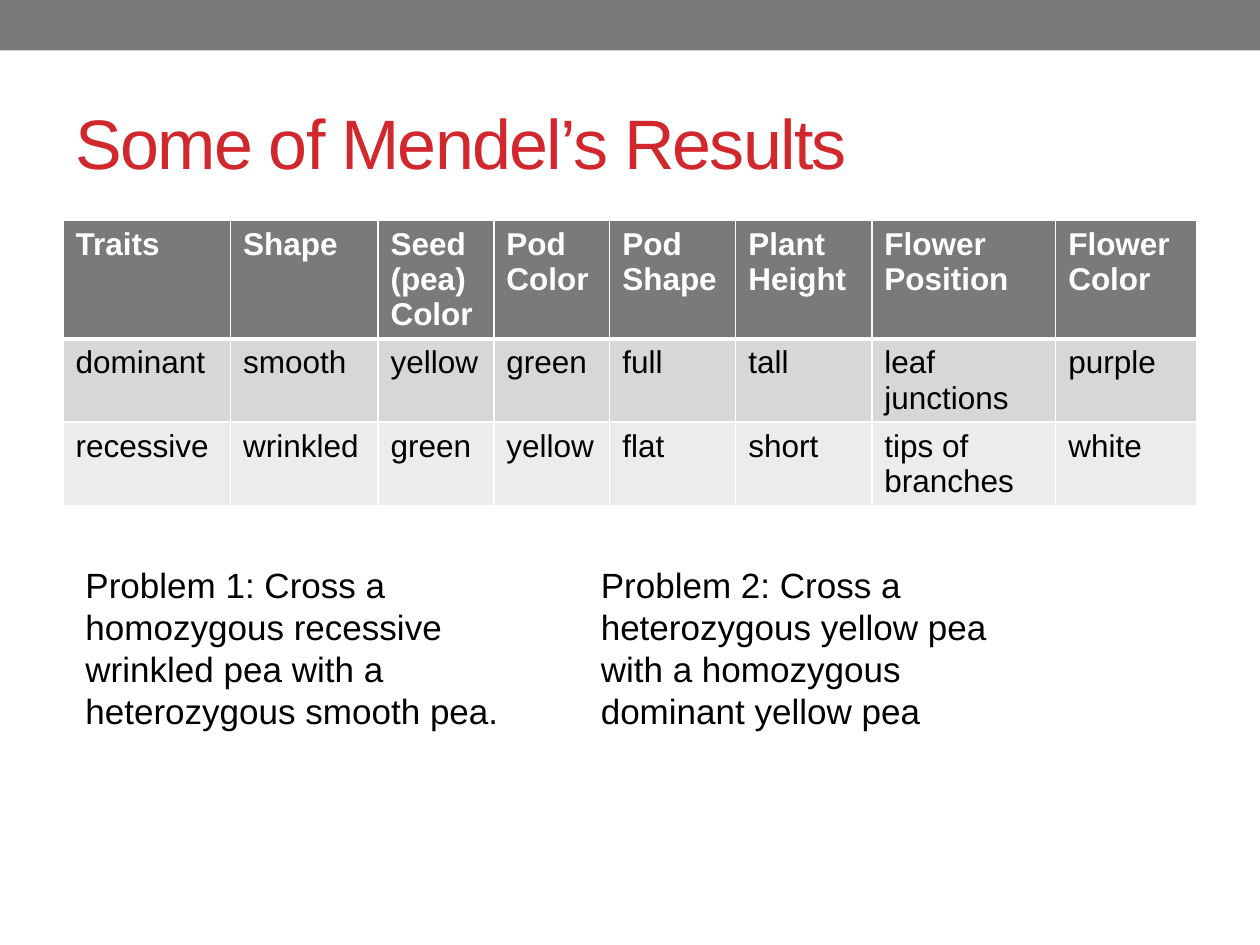
from lxml.etree import SubElement
from pptx import Presentation
from pptx.dml.color import RGBColor as RGB
from pptx.enum.shapes import MSO_SHAPE as Shape
from pptx.enum.text import MSO_ANCHOR as Anchor, MSO_AUTO_SIZE as Fit, PP_ALIGN as Align
from pptx.oxml.ns import qn
from pptx.util import Inches, Pt

HUES = {"gray": "7A7A7A", "red": "D1282E", "white": "FFFFFF",
        "black": "000000", "mid": "D7D7D7", "pale": "ECECEC"}
TITLE = "Some of Mendel’s Results"
ROWS = [
    ["Traits", "Shape", "Seed (pea) Color", "Pod Color", "Pod Shape",
     "Plant Height", "Flower Position", "Flower Color"],
    ["dominant", "smooth", "yellow", "green", "full", "tall",
     "leaf junctions", "purple"],
    ["recessive", "wrinkled", "green", "yellow", "flat", "short",
     "tips of branches", "white"],
]
WIDTHS = [1.33, 1.17, 0.92, 0.92, 1, 1.08, 1.46, 1.12]
FILLS = ["gray", "mid", "pale"]
TASKS = [
    (0.58, 4, "Problem 1: Cross a homozygous recessive wrinkled pea with a heterozygous smooth pea."),
    (4.67, 3.67, "Problem 2: Cross a heterozygous yellow pea with a homozygous dominant yellow pea"),
]


def color(name):
    return RGB.from_string(HUES[name])


def write(frame, text, size=18, hue="black", bold=False, space=0):
    frame.word_wrap = True
    para = frame.paragraphs[0]
    para.alignment = Align.LEFT
    run = para.add_run()
    run.text = text
    font = run.font
    font.name, font.size, font.bold = "Arial", Pt(size), bold
    font.color.rgb = color(hue)
    if space:
        font._element.set("spc", str(space * 100))


def edge(cell, top, base):
    props = cell._tc.get_or_add_tcPr()
    for side, width in (("L", 1), ("R", 1), ("T", top), ("B", base)):
        line = SubElement(props, qn(f"a:ln{side}"), w=str(Pt(width)))
        fill = SubElement(line, qn("a:solidFill"))
        SubElement(fill, qn("a:srgbClr"), val=HUES["white"])


def main():
    deck = Presentation()
    deck.slide_width, deck.slide_height = Inches(10), Inches(7.5)
    slide = deck.slides.add_slide(deck.slide_layouts[5])
    shapes = slide.shapes

    title = shapes.title
    title.left, title.top = Inches(0.5), Inches(0.58)
    title.width, title.height = Inches(9), Inches(1.08)
    title.text_frame.vertical_anchor = Anchor.MIDDLE
    write(title.text_frame, TITLE, size=40, hue="red", space=-1)

    band = shapes.add_shape(Shape.RECTANGLE, 0, 0, Inches(10), Inches(0.4))
    band.shadow.inherit = False
    band.fill.solid()
    band.fill.fore_color.rgb = color("gray")
    band.line.fill.background()

    table = shapes.add_table(len(ROWS), len(WIDTHS), Inches(0.5), Inches(1.75),
                             Inches(9), Inches(0.41 * len(ROWS))).table
    for col, width in zip(table.columns, WIDTHS):
        col.width = Inches(width)
    for r, row in enumerate(ROWS):
        head = r == 0
        for c, text in enumerate(row):
            cell = table.cell(r, c)
            edge(cell, top=3 if r == 1 else 1, base=3 if head else 1)
            cell.fill.solid()
            cell.fill.fore_color.rgb = color(FILLS[r])
            write(cell.text_frame, text, hue="white" if head else "black", bold=head)

    for left, width, text in TASKS:
        box = shapes.add_textbox(Inches(left), Inches(4.42), Inches(width), Inches(1.45))
        write(box.text_frame, text, size=20)
        box.text_frame.auto_size = Fit.SHAPE_TO_FIT_TEXT

    deck.save("out.pptx")


if __name__ == "__main__":
    main()
